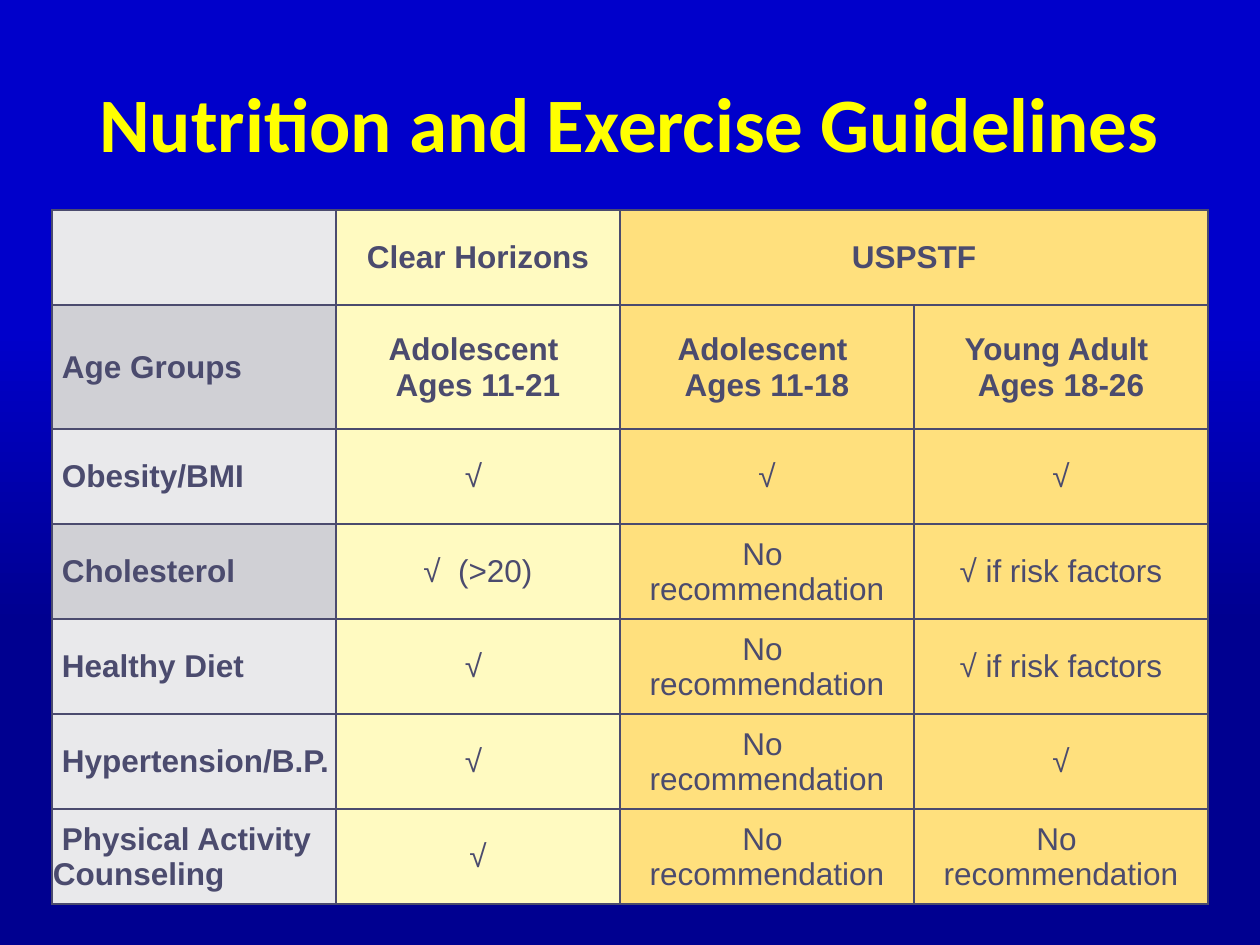
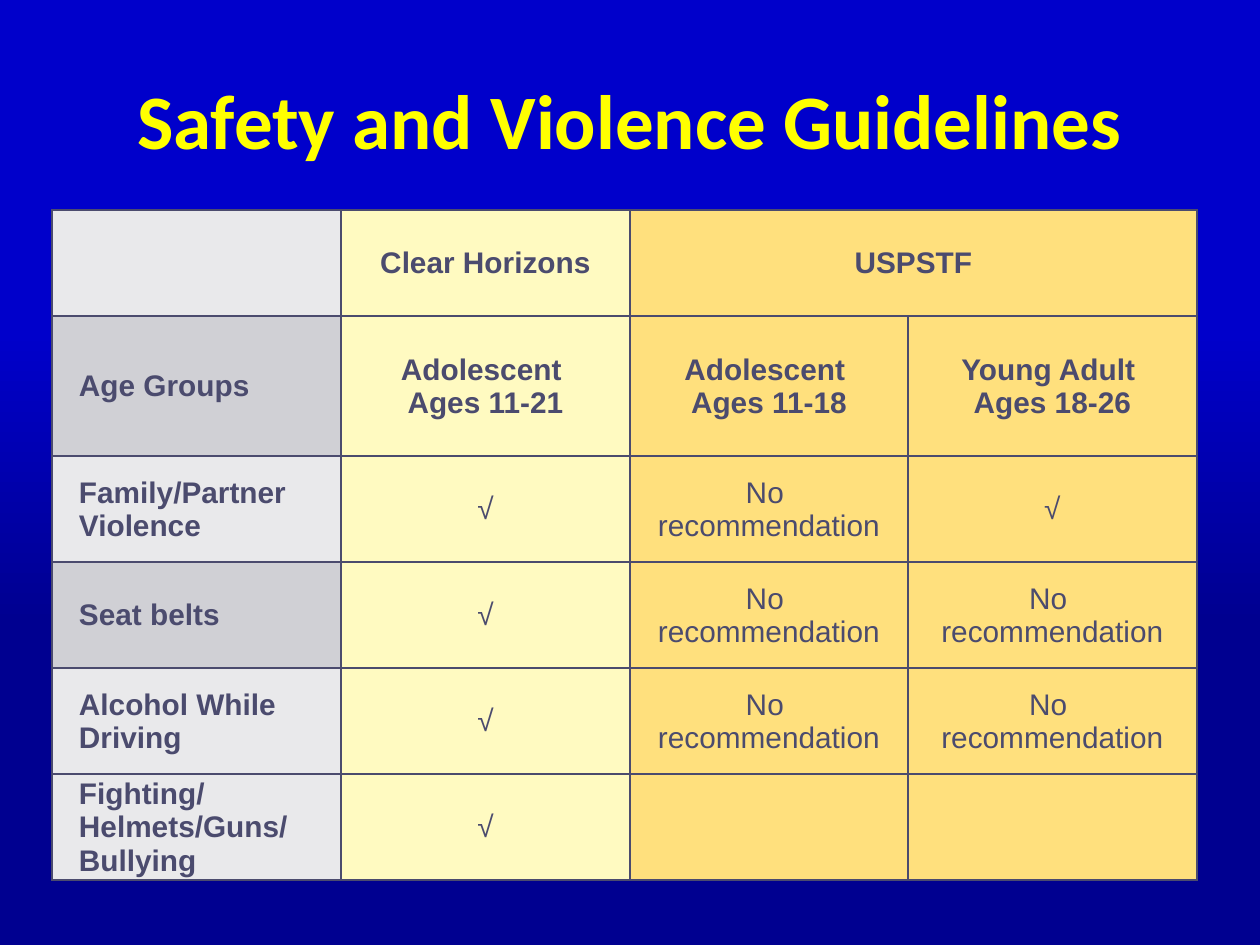
from dataclasses import dataclass

from lxml import etree
from pptx import Presentation
from pptx.dml.color import RGBColor
from pptx.enum.text import MSO_ANCHOR, PP_ALIGN
from pptx.oxml.ns import qn
from pptx.util import Emu, Pt

MIDDLE = MSO_ANCHOR.MIDDLE
LEFT, CENTER = PP_ALIGN.LEFT, PP_ALIGN.CENTER
TITLE_ONLY = 5
PX_PER_INCH = 126
SLIDE_W, SLIDE_H = 1260, 945


@dataclass(frozen=True)
class Theme:
    bg_low: str = "000090"
    bg_high: str = "0000CB"
    title: str = "FFFF00"
    ink: str = "4B4B6E"
    label: str = "E9E9EB"
    label_dark: str = "D0D0D5"
    columns: tuple = ("FFFAC1", "FFE07D", "FFE07D")
    title_font: str = "Calibri"
    table_font: str = "Arial"
    title_size: int = 44
    border: int = 1


CHECK = "√"
CHECK_SP = "√ "
NO_REC = "No \nrecommendation"
IF_RISK = "√ if risk factors"

# "\n" starts a paragraph, "\v" breaks a line inside one
HEADER = [
    ("", "Clear Horizons", "USPSTF", ""),
    ("Age Groups", "Adolescent \vAges 11-21", "Adolescent \vAges 11-18",
     "Young Adult \vAges 18-26"),
]
DARK_LABEL_ROWS = (1, 3)

NUTRITION = [
    ("Obesity/BMI", CHECK_SP, CHECK, CHECK),
    ("Cholesterol", "√  (>20)", NO_REC, IF_RISK),
    ("Healthy Diet", CHECK_SP, NO_REC, IF_RISK),
    ("Hypertension/B.P.", CHECK_SP, NO_REC, CHECK),
    ("Physical Activity Counseling", CHECK, NO_REC, NO_REC),
]
SAFETY = [
    ("Family/Partner Violence", CHECK, NO_REC, CHECK),
    ("Seat belts", CHECK, NO_REC, NO_REC),
    ("Alcohol While Driving", CHECK, NO_REC, NO_REC),
    ("Fighting/Helmets/Guns/Bullying", CHECK, "", ""),
]


def px(n):
    return Emu(round(n * 914400 / PX_PER_INCH))


def rgb(color):
    return RGBColor.from_string(color)


class Deck:
    """Holds the theme, the presentation and the current slide."""

    def __init__(self, theme):
        self.theme = theme
        self.prs = Presentation()
        self.prs.slide_width, self.prs.slide_height = px(SLIDE_W), px(SLIDE_H)
        self.s = None
        self.set_background()

    def set_background(self):
        fill = self.prs.slide_master.background.fill
        fill.gradient()
        fill.gradient_angle = 90
        stops = ((0.34, self.theme.bg_low), (0.65, self.theme.bg_high))
        for stop, (position, color) in zip(fill.gradient_stops, stops):
            stop.position = position
            stop.color.rgb = rgb(color)

    def add_slide(self):
        self.s = self.prs.slides.add_slide(self.prs.slide_layouts[TITLE_ONLY])

    def add_run(self, p, text, font, size, color, bold):
        r = p.add_run()
        r.text = text
        r.font.name, r.font.size, r.font.bold = font, Pt(size), bold
        r.font.color.rgb = rgb(color)

    def add_title(self, text, top):
        t = self.theme
        sp = self.s.shapes.title
        sp.left, sp.top, sp.width, sp.height = px(0), px(top), px(SLIDE_W), px(158)
        tf = sp.text_frame
        tf.vertical_anchor = MIDDLE
        p = tf.paragraphs[0]
        p.alignment = CENTER
        self.add_run(p, text, t.title_font, t.title_size, t.title, True)

    def add_borders(self, cell):
        tc_pr = cell._tc.get_or_add_tcPr()
        for i, side in enumerate(("a:lnL", "a:lnR", "a:lnT", "a:lnB")):
            ln = etree.Element(qn(side), w=str(Pt(self.theme.border)))
            fill = etree.SubElement(ln, qn("a:solidFill"))
            etree.SubElement(fill, qn("a:srgbClr"), val=self.theme.ink)
            tc_pr.insert(i, ln)

    def fill_cell(self, cell, text, color, size, bold, align, margin, indent):
        """Margin moves the whole paragraph, indent only its first line."""
        t = self.theme
        cell.fill.solid()
        cell.fill.fore_color.rgb = rgb(color)
        self.add_borders(cell)
        cell.vertical_anchor = MIDDLE
        cell.margin_left = cell.margin_right = cell.margin_top = px(1)
        cell.margin_bottom = 0
        if not text:
            return
        tf = cell.text_frame
        for i, line in enumerate(text.split("\n")):
            p = tf.add_paragraph() if i else tf.paragraphs[0]
            p.alignment = align
            p_pr = p._p.get_or_add_pPr()
            p_pr.set("marL", str(px(margin)))
            p_pr.set("indent", str(px(indent)))
            for j, part in enumerate(line.split("\v")):
                if j:
                    p.add_line_break()
                self.add_run(p, part, t.table_font, size, t.ink, bold)

    def add_guidelines(self, body, widths, row_h, age_h, size, margin=0, indent=0):
        """Table with the shared header; margin and indent place the row labels."""
        t = self.theme
        rows = HEADER + body
        heights = [row_h, age_h] + [row_h] * len(body)
        frame = self.s.shapes.add_table(
            len(rows), len(widths), px(52), px(210), px(sum(widths)), px(sum(heights)))
        table = frame.table
        table.first_row = table.horz_banding = False
        for column, width in zip(table.columns, widths):
            column.width = px(width)
        for row, height in zip(table.rows, heights):
            row.height = px(height)
        for i, texts in enumerate(rows):
            label_color = t.label_dark if i in DARK_LABEL_ROWS else t.label
            for j, (text, color) in enumerate(zip(texts, (label_color, *t.columns))):
                is_label = j == 0
                self.fill_cell(
                    table.cell(i, j), text, color, size,
                    bold=is_label or i < len(HEADER),
                    align=LEFT if is_label else CENTER,
                    margin=margin if is_label else 0,
                    indent=indent if is_label else 0)
        table.cell(0, 2).merge(table.cell(0, 3))


def main():
    deck = Deck(Theme())

    deck.add_slide()
    deck.add_title("Nutrition and Exercise Guidelines", top=43)
    deck.add_guidelines(NUTRITION, (284, 284, 294, 294), row_h=95, age_h=124,
                        size=18, indent=9)

    deck.add_slide()
    deck.add_title("Safety and Violence Guidelines", top=40)
    deck.add_guidelines(SAFETY, (289, 289, 278, 289), row_h=106, age_h=140,
                        size=17, margin=26)

    deck.prs.save("out.pptx")


if __name__ == "__main__":
    main()
